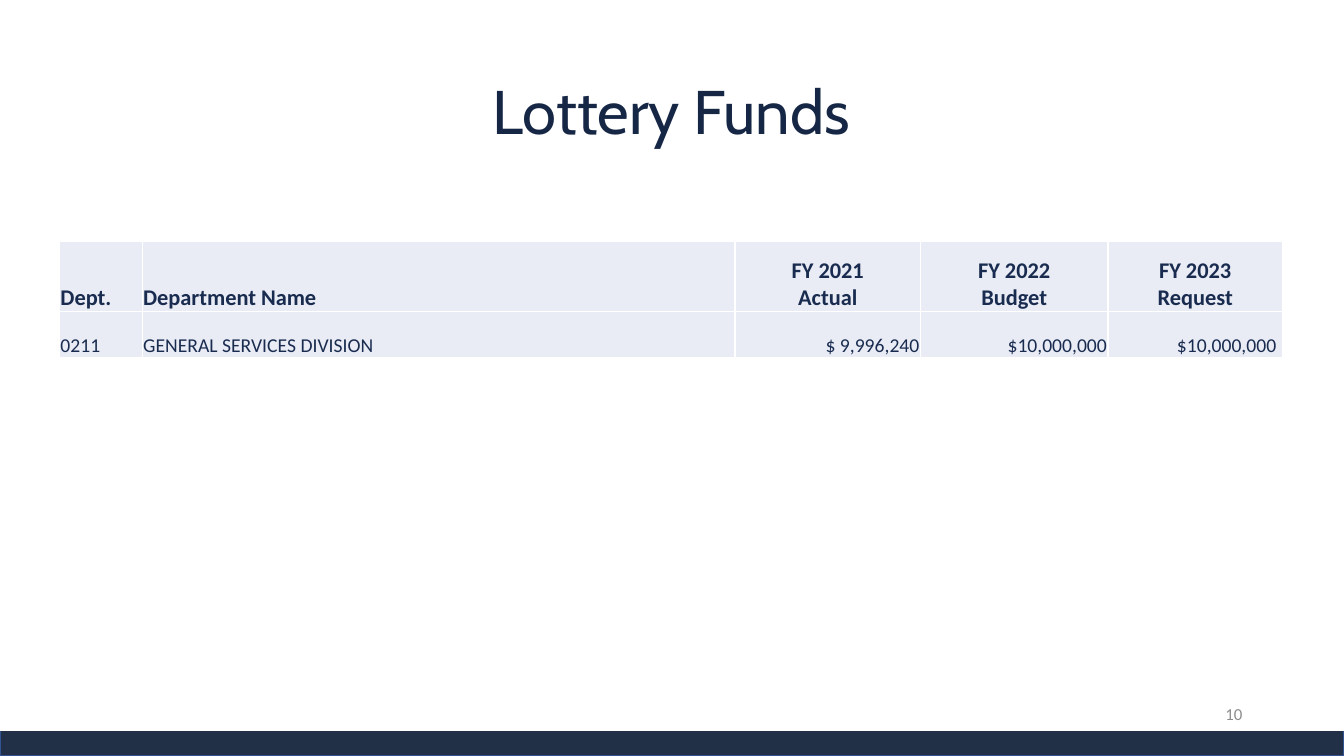
from lxml import etree
from pptx import Presentation
from pptx.dml.color import RGBColor
from pptx.enum.shapes import MSO_SHAPE
from pptx.enum.text import MSO_ANCHOR, PP_ALIGN
from pptx.oxml.ns import qn
from pptx.util import Inches, Pt

WHITE = RGBColor(0xFF, 0xFF, 0xFF)
BAR_FILL = RGBColor(0x21, 0x2F, 0x47)
BAR_LINE = RGBColor(0x32, 0x54, 0x91)
TITLE_NAVY = RGBColor(0x16, 0x27, 0x46)
TABLE_NAVY = RGBColor(0x19, 0x2C, 0x4F)
CELL_FILL = RGBColor(0xE9, 0xEB, 0xF5)
NUMBER_GRAY = RGBColor(0x8C, 0x8C, 0x8C)

COLUMN_WIDTHS = [0.82, 5.88, 1.84, 1.86, 1.73]
ROW_HEIGHTS = [0.7, 0.46]
ROWS = [
    ["Dept.", "Department Name", "FY 2021\nActual", "FY 2022\nBudget", "FY 2023\nRequest"],
    ["0211", "GENERAL SERVICES DIVISION", "$ 9,996,240", "$10,000,000", "$10,000,000"],
]


def write_lines(frame, text, size, font, color, align, bold=False):
    """Write each line of the text as its own paragraph."""
    for index, line in enumerate(text.split("\n")):
        paragraph = frame.add_paragraph() if index else frame.paragraphs[0]
        paragraph.alignment = align
        run = paragraph.add_run()
        run.text = line
        run.font.size = Pt(size)
        run.font.name = font
        run.font.bold = bold
        run.font.color.rgb = color


def add_text(slide, box, text, size, font, color, align):
    shape = slide.shapes.add_textbox(*map(Inches, box))
    frame = shape.text_frame
    frame.word_wrap = True
    frame.vertical_anchor = MSO_ANCHOR.MIDDLE
    write_lines(frame, text, size, font, color, align)
    return frame


def add_bar(slide, box, fill, line=None):
    shape = slide.shapes.add_shape(MSO_SHAPE.RECTANGLE, *map(Inches, box))
    shape.shadow.inherit = False
    shape.fill.solid()
    shape.fill.fore_color.rgb = fill
    if line is None:
        shape.line.fill.background()
    else:
        shape.line.color.rgb = line
        shape.line.width = Pt(1)


def add_footer(slide, left, top, width):
    """Navy bar with a thin white edge above it, and the slide number."""
    add_bar(slide, (left, top, width, 0.25), BAR_FILL, BAR_LINE)
    add_bar(slide, (left, top - 0.05, width, 0.05), WHITE)
    add_text(slide, (left + 9.42, top - 0.37, 3, 0.4), "10", 12, "Calibri",
             NUMBER_GRAY, PP_ALIGN.RIGHT)


def set_borders(cell):
    properties = cell._tc.get_or_add_tcPr()
    for index, side in enumerate(("a:lnL", "a:lnR", "a:lnT", "a:lnB")):
        border = etree.Element(qn(side), w=str(Pt(1)))
        fill = etree.SubElement(border, qn("a:solidFill"))
        etree.SubElement(fill, qn("a:srgbClr"), val=str(WHITE))
        properties.insert(index, border)


def add_funds_table(slide, left, top):
    box = (left, top, sum(COLUMN_WIDTHS), sum(ROW_HEIGHTS))
    table = slide.shapes.add_table(
        len(ROWS), len(COLUMN_WIDTHS), *map(Inches, box)).table
    for column, width in zip(table.columns, COLUMN_WIDTHS):
        column.width = Inches(width)
    for row, height in zip(table.rows, ROW_HEIGHTS):
        row.height = Inches(height)

    for row_index, texts in enumerate(ROWS):
        header = row_index == 0
        for column_index, text in enumerate(texts):
            cell = table.cell(row_index, column_index)
            cell.margin_left = cell.margin_right = cell.margin_top = Inches(0.01)
            cell.margin_bottom = 0
            cell.vertical_anchor = MSO_ANCHOR.BOTTOM
            cell.fill.solid()
            cell.fill.fore_color.rgb = CELL_FILL
            set_borders(cell)
            # Amounts sit right under centred year headings
            align = PP_ALIGN.LEFT
            if column_index >= 2:
                align = PP_ALIGN.CENTER if header else PP_ALIGN.RIGHT
            write_lines(cell.text_frame, text, 16 if header else 14, "Calibri",
                        TABLE_NAVY, align, bold=header)
    # The last amount keeps a small gap from the table edge
    table.cell(1, len(COLUMN_WIDTHS) - 1).margin_right = Inches(0.06)


def main():
    presentation = Presentation()
    presentation.slide_width = Inches(13.33)
    presentation.slide_height = Inches(7.5)
    slide = presentation.slides.add_slide(presentation.slide_layouts[6])

    add_footer(slide, 0, 7.25, 13.33)
    title = add_text(slide, (0.91, 0.51, 11.5, 1.25), "Lottery Funds", 44, "Cabin",
                     TITLE_NAVY, PP_ALIGN.CENTER)
    title.paragraphs[0].line_spacing = 0.9
    add_funds_table(slide, 0.59, 2.39)

    presentation.save("out.pptx")


if __name__ == "__main__":
    main()
